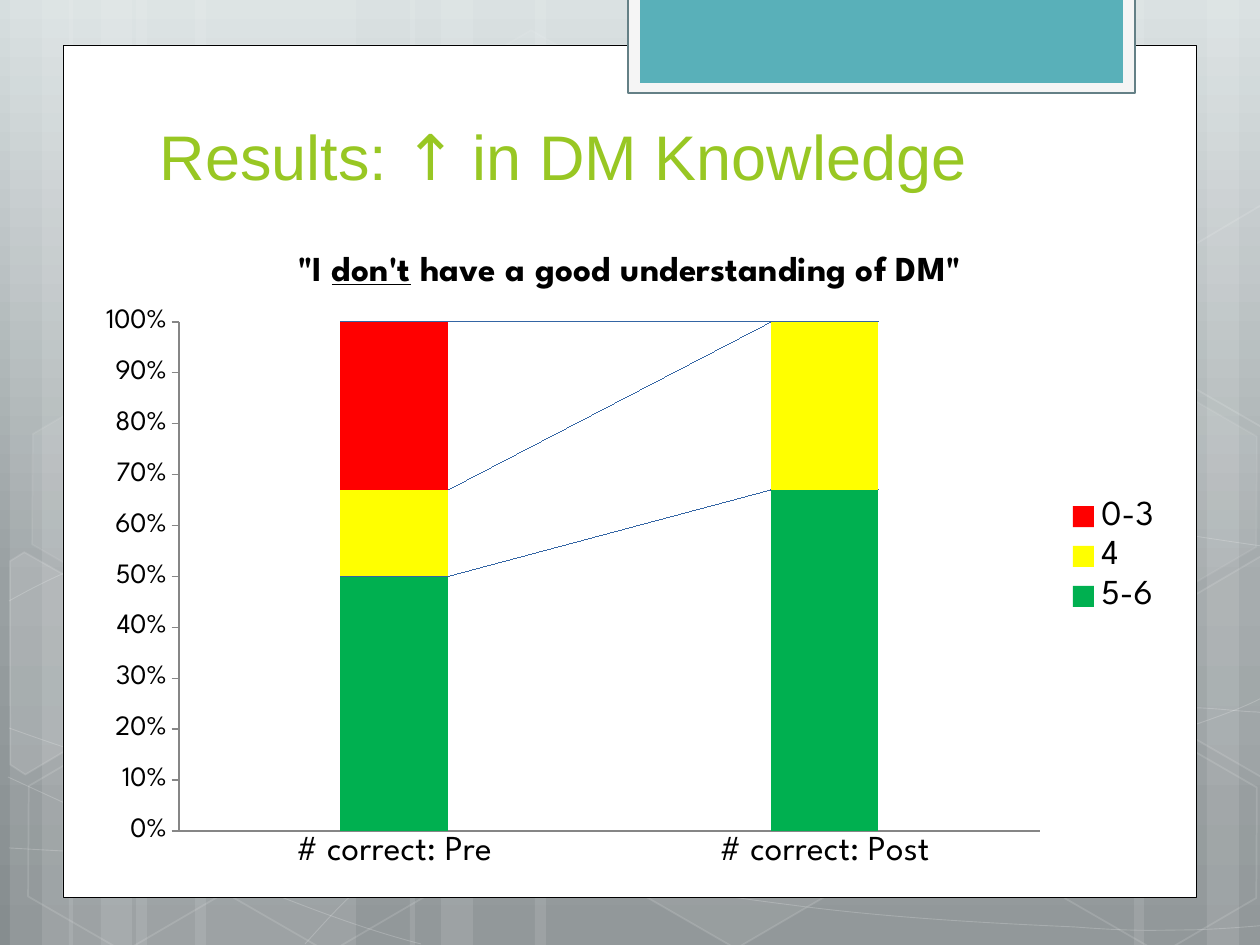
from copy import deepcopy
from math import cos, radians, sin

from lxml import etree
from pptx import Presentation
from pptx.chart.data import CategoryChartData
from pptx.dml.color import RGBColor
from pptx.enum.chart import XL_CHART_TYPE, XL_LEGEND_POSITION, XL_TICK_MARK
from pptx.enum.shapes import MSO_SHAPE
from pptx.enum.text import MSO_ANCHOR, PP_ALIGN
from pptx.oxml import parse_xml
from pptx.oxml.ns import nsdecls, qn
from pptx.util import Pt

PX = 914400 / 126
WIDTH, HEIGHT = 1260, 945
RECTANGLE, HEXAGON = MSO_SHAPE.RECTANGLE, MSO_SHAPE.HEXAGON
STACKED = XL_CHART_TYPE.COLUMN_STACKED_100
LEGEND_RIGHT = XL_LEGEND_POSITION.RIGHT
TICK_NONE, TICK_OUT = XL_TICK_MARK.NONE, XL_TICK_MARK.OUTSIDE
BOTTOM, LEFT = MSO_ANCHOR.BOTTOM, PP_ALIGN.LEFT
FONT = "League Spartan"
WHITE = "FFFFFF"
TILT = 30
CHART_BOX = (84, 231, 1092, 651)
PLOT_BOX = (179, 322, 861, 509)

STRIPS = [(136, 220), (10, 63), (42, 105), (195, 220), (69, 63), (101, 105),
          (924, 220), (1207, 63), (1134, 105), (535, 389), (410, 63), (441, 105)]
CURVES = [
    [(9, 848), (77, 852), (145, 856), (239, 854), (334, 853), (451, 851), (577, 838),
     (703, 825), (882, 801), (998, 777), (1113, 753), (1231, 717), (1269, 694)],
    [(9, 601), (45, 581), (82, 562), (152, 543), (224, 524), (326, 499), (437, 488),
     (549, 479), (685, 478), (824, 488), (963, 498), (1193, 537), (1269, 547)],
    [(8, 777), (160, 847), (311, 916), (421, 944)],
    [(9, 728), (48, 742), (88, 756), (161, 776), (234, 795), (344, 827), (450, 848),
     (554, 869), (687, 892), (791, 905), (896, 919), (1008, 924), (1075, 927),
     (1140, 932), (1158, 930), (1191, 930), (1223, 929), (1246, 927), (1269, 925)],
    [(305, 944), (328, 919), (350, 893), (381, 871), (411, 848), (454, 825), (489, 805),
     (524, 789), (546, 780), (592, 767), (638, 754), (722, 737), (766, 728),
     (811, 719), (818, 719), (857, 717), (896, 713), (958, 709), (1000, 708),
     (1045, 707), (1116, 708), (1116, 708), (1116, 708), (1201, 708), (1201, 708),
     (1223, 709), (1245, 712), (1256, 712), (1264, 713), (1260, 712), (1268, 713)],
]
HEXAGONS = [(421, 45, 4, 8), (626, 742, 6, 12), (14, 745, 0, 12), (18, 393, 7, 8),
            (219, 746, 0, 12), (949, 571, 10, 12), (1051, 747, 0, 12), (1051, 396, 7, 8)]
CUT_HEXAGONS = [
    ([(10, 561), (24, 552), (121, 607), (120, 718), (25, 774), (10, 765)], (45, 674), 10),
    ([(1167, 611), (1261, 556), (1271, 562), (1271, 772), (1263, 777), (1167, 722)],
     (1241, 655), 4),
    ([(1167, 261), (1261, 205), (1272, 212), (1271, 422), (1263, 427), (1167, 372)],
     (1241, 304), 0),
]
SERIES = [("5-6", (50, 67), "00B050"), ("4", (17, 33), "FFFF00"), ("0-3", (33, 0), "FF0000")]


def px(*lengths):
    return [round(length * PX) for length in lengths]


def rgb(value):
    return RGBColor.from_string(value)


def set_format(target, values):
    for name, value in values.items():
        setattr(target, name, value)


def fill_with(fill, color):
    fill.solid()
    fill.fore_color.rgb = rgb(color)


def set_alpha(shape, tags, alpha):
    if alpha < 100:
        solid = shape.element.spPr.find("/".join(qn(tag) for tag in tags))
        etree.SubElement(solid[0], qn("a:alpha")).set("val", str(alpha * 1000))


def style_shape(shape, fill=None, alpha=100, line=None, width=1, line_alpha=100):
    shape.shadow.inherit = False
    if fill and alpha:
        fill_with(shape.fill, fill)
        set_alpha(shape, ["a:solidFill"], alpha)
    else:
        shape.fill.background()
    if line:
        fill_with(shape.line.fill, line)
        shape.line.width = Pt(width)
        set_alpha(shape, ["a:ln", "a:solidFill"], line_alpha)
    else:
        shape.line.fill.background()


def add_preset(page, kind, box, **style):
    shape = page.shapes.add_shape(kind, *px(*box))
    style_shape(shape, **style)
    return shape


def add_outline(page, points, close, **style):
    builder = page.shapes.build_freeform(*points[0], scale=PX)
    builder.add_line_segments(points[1:], close=close)
    shape = builder.convert_to_shape()
    style_shape(shape, **style)
    return shape


def bend(shape):
    lines = list(shape.element.iter(qn("a:lnTo")))
    for start in range(0, len(lines), 3):
        curve = etree.Element(qn("a:cubicBezTo"))
        lines[start].addprevious(curve)
        for line in lines[start:start + 3]:
            curve.append(line[0])
            line.getparent().remove(line)


def turn_back(point, center):
    x, y = point[0] - center[0], point[1] - center[1]
    c, s = cos(radians(TILT)), sin(radians(TILT))
    return center[0] + x * c + y * s, center[1] + y * c - x * s


def paint_background(page):
    fill = page.background.fill
    fill.gradient()
    fill.gradient_angle = 270
    stop_list = page.element.find(".//" + qn("a:gsLst"))
    stop_list.append(deepcopy(stop_list[-1]))
    stops = [(0, "D6DEDF"), (0.62, "99A0A2"), (1, "868D8F")]
    for stop, (position, color) in zip(fill.gradient_stops, stops):
        stop.position = position
        stop.color.rgb = rgb(color)


def add_decoration(page):
    for left, width in STRIPS:
        add_preset(page, RECTANGLE, (left, 0, width, HEIGHT), fill=WHITE, alpha=10)
    for knots in CURVES:
        bend(add_outline(page, knots, False, line=WHITE, width=0.5, line_alpha=20))
    for left, top, alpha, line_alpha in HEXAGONS:
        hexagon = add_preset(page, HEXAGON, (left, top, 220, 192), fill=WHITE, alpha=alpha,
                             line=WHITE, line_alpha=line_alpha)
        hexagon.adjustments[0] = 0.285
        hexagon.rotation = TILT
    for points, center, alpha in CUT_HEXAGONS:
        upright = [turn_back(point, center) for point in points]
        add_outline(page, upright, True, fill=WHITE, alpha=alpha,
                    line=WHITE, line_alpha=12).rotation = TILT


def add_panels(page):
    add_preset(page, RECTANGLE, (63, 45, 1134, 853), fill=WHITE, line="000000", width=0.5)
    add_preset(page, RECTANGLE, (628, -2, 507, 95), fill="F5F5F5", line="648086", width=1.25)
    add_preset(page, RECTANGLE, (640, -2, 483, 85), fill="59B0B9")


def add_spans(para, texts, values, color):
    for text, extra in texts:
        span = para.add_run()
        span.text = text
        set_format(span.font, values | extra)
        span.font.color.rgb = rgb(color)


def add_title(page):
    title = page.shapes.title
    page.shapes.element.append(title.element)
    set_format(title, dict(zip(("left", "top", "width", "height"), px(147, 105, 968, 94))))
    set_format(title.text_frame, {"vertical_anchor": BOTTOM, "word_wrap": True})
    para = title.text_frame.paragraphs[0]
    para.alignment = LEFT
    add_spans(para, [("Results: ", {}), ("↑ ", {"name": FONT}), ("in DM Knowledge", {})],
              {"name": "Arial", "size": Pt(36)}, "98C723")


def format_axis(axis, size, values):
    set_format(axis, {"has_major_gridlines": False, "minor_tick_mark": TICK_NONE} | values)
    axis.tick_labels.font.size = Pt(size)
    fill_with(axis.format.line.fill, "868686")
    axis.format.line.width = Pt(0.75)


def add_series_lines(chart):
    lines = parse_xml(f'<c:serLines {nsdecls("c", "a")}><c:spPr><a:ln w="9525"><a:solidFill>'
                      '<a:srgbClr val="3465A4"/></a:solidFill></a:ln></c:spPr></c:serLines>')
    chart.element.find(".//" + qn("c:barChart")).find(qn("c:axId")).addprevious(lines)


def place_plot_area(chart):
    plot_area = chart.element.find(".//" + qn("c:plotArea"))
    for old in plot_area.findall(qn("c:layout")):
        plot_area.remove(old)
    layout = etree.Element(qn("c:layout"))
    manual = etree.SubElement(layout, qn("c:manualLayout"))
    left, top, width, height = CHART_BOX
    x, y, w, h = PLOT_BOX
    values = {"layoutTarget": "inner", "xMode": "edge", "yMode": "edge",
              "x": (x - left) / width, "y": (y - top) / height,
              "w": w / width, "h": h / height}
    for name, value in values.items():
        etree.SubElement(manual, qn("c:" + name)).set("val", str(value))
    plot_area.insert(0, layout)


def add_knowledge_chart(page):
    data = CategoryChartData()
    data.categories = ["# correct: Pre", "# correct: Post"]
    for name, values, _ in SERIES:
        data.add_series(name, values)
    chart = page.shapes.add_chart(STACKED, *px(*CHART_BOX), data).chart
    set_format(chart.font, {"name": FONT, "size": Pt(10)})
    chart.font.color.rgb = rgb("000000")
    add_spans(chart.chart_title.text_frame.paragraphs[0],
              [('"I ', {}), ("don't", {"underline": True}),
               (' have a good understanding of DM"', {})],
              {"name": FONT, "size": Pt(20), "bold": True}, "000000")
    chart.has_legend = True
    set_format(chart.legend, {"position": LEGEND_RIGHT, "include_in_layout": False})
    set_format(chart.legend.font, {"size": Pt(20), "name": FONT})
    plot = chart.plots[0]
    set_format(plot, {"gap_width": 300, "overlap": 100, "vary_by_categories": False})
    for series, (_, _, color) in zip(plot.series, SERIES):
        fill_with(series.format.fill, color)
    add_series_lines(chart)
    format_axis(chart.category_axis, 20, {"major_tick_mark": TICK_NONE})
    format_axis(chart.value_axis, 16, {"major_tick_mark": TICK_OUT})
    set_format(chart.value_axis.tick_labels,
               {"number_format": "0%", "number_format_is_linked": False})
    place_plot_area(chart)


def main():
    deck = Presentation()
    deck.slide_width, deck.slide_height = px(WIDTH, HEIGHT)
    page = deck.slides.add_slide(deck.slide_layouts[5])
    paint_background(page)
    add_decoration(page)
    add_panels(page)
    add_knowledge_chart(page)
    add_title(page)
    deck.save("out.pptx")


if __name__ == "__main__":
    main()
